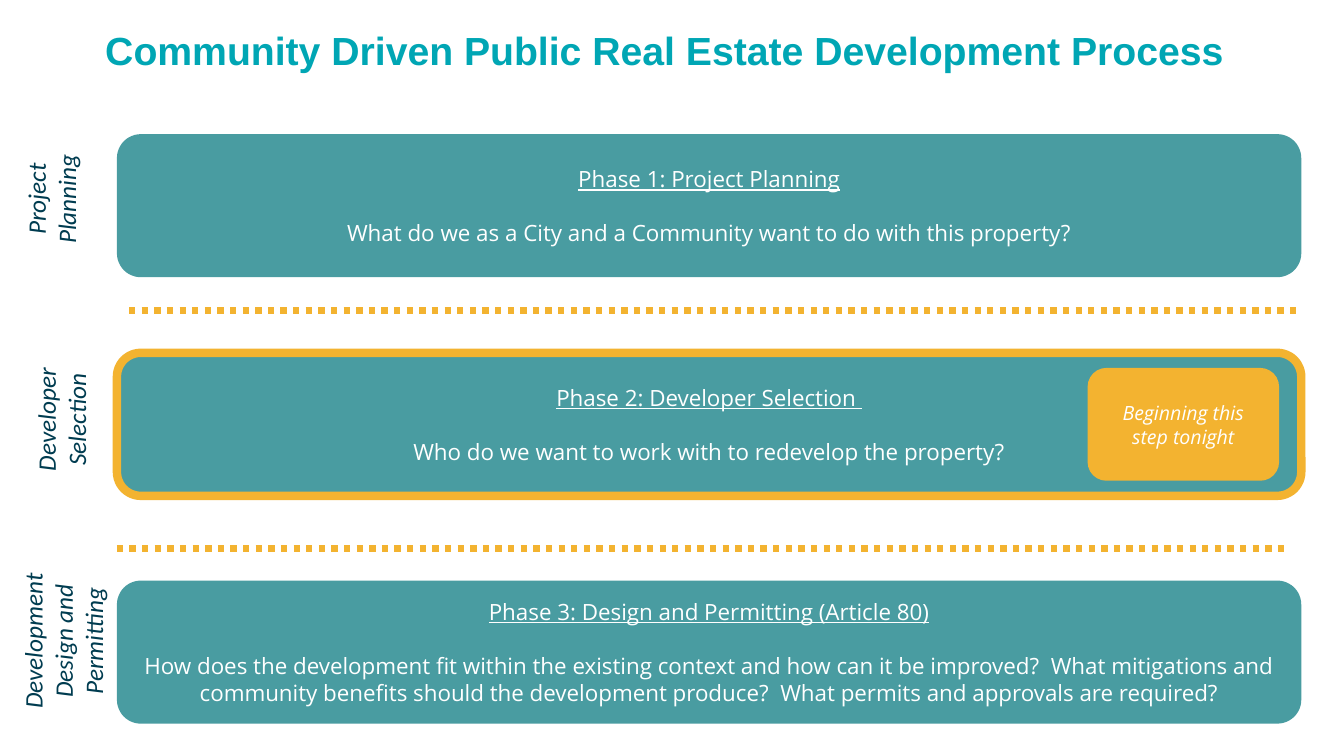
from dataclasses import dataclass

from pptx import Presentation
from pptx.dml.color import RGBColor
from pptx.enum.dml import MSO_LINE
from pptx.enum.shapes import MSO_CONNECTOR, MSO_SHAPE
from pptx.enum.text import MSO_ANCHOR as Anchor, MSO_AUTO_SIZE as AutoSize, PP_ALIGN as Align
from pptx.oxml.ns import qn
from pptx.util import Pt


@dataclass(frozen=True)
class Theme:
    title: RGBColor = RGBColor.from_string("00A6B4")
    phase: RGBColor = RGBColor.from_string("499CA1")
    accent: RGBColor = RGBColor.from_string("F3B330")
    label: RGBColor = RGBColor.from_string("003C50")
    white: RGBColor = RGBColor.from_string("FFFFFF")
    title_size: int = 28
    label_size: int = 18
    phase_size: int = 16
    badge_size: int = 14
    leading: float = 1.21


theme = Theme()


def write(frame, lines, font, size, color, anchor=Anchor.MIDDLE, **styles):
    """Fill a text frame with centred paragraphs in one style."""
    frame.text = "\n".join(lines)
    frame.word_wrap = True
    frame.auto_size = AutoSize.NONE
    frame.vertical_anchor = anchor
    for para in frame.paragraphs:
        para.alignment = Align.CENTER
        for span in para.runs:
            span.font.name = font
            span.font.size = Pt(size)
            span.font.color.rgb = color
            for style, value in styles.items():
                setattr(span.font, style, value)


def add_box(left, top, width, height, fill, lines, size, **styles):
    """Add a rounded box with white text and fixed line spacing."""
    box = slide.shapes.add_shape(
        MSO_SHAPE.ROUNDED_RECTANGLE, Pt(left), Pt(top), Pt(width), Pt(height))
    box.adjustments[0] = 0.167
    box.shadow.inherit = False
    box.fill.solid()
    box.fill.fore_color.rgb = fill
    box.line.fill.background()
    write(box.text_frame, lines, "Open Sans", size, theme.white, **styles)
    for para in box.text_frame.paragraphs:
        para.line_spacing = Pt(size * theme.leading)
    return box


deck = Presentation()
deck.slide_width, deck.slide_height = Pt(960), Pt(540)
page = slide = deck.slides.add_slide(deck.slide_layouts[5])

# Title
title = page.shapes.title
title.left, title.top, title.width, title.height = Pt(28), Pt(15), Pt(893), Pt(91.5)
write(title.text_frame, ["Community Driven Public Real Estate Development Process"],
      "Arial", theme.title_size, theme.title, Anchor.TOP, bold=True)

# Dotted dividers between the phases
for left, top in [(92.2, 221.8), (83.5, 391.7)]:
    divider = page.shapes.add_connector(
        MSO_CONNECTOR.STRAIGHT, Pt(left), Pt(top), Pt(left + 837.4), Pt(top))
    divider.line.color.rgb = theme.accent
    divider.line.width = Pt(4.5)
    divider.line.dash_style = MSO_LINE.ROUND_DOT
    properties = divider.element.spPr
    properties.append(properties.makeelement(qn("a:effectLst"), {}))

# Phase boxes
phases = [
    (95.8, "Phase 1: Project Planning",
     "What do we as a City and a Community want to do with this property?"),
    (252, "Phase 2: Developer Selection ",
     "Who do we want to work with to redevelop the property?"),
    (414.7, "Phase 3: Design and Permitting (Article 80)",
     "How does the development fit within the existing context and how can it be "
     "improved?  What mitigations and community benefits should the development "
     "produce?  What permits and approvals are required?"),
]
boxes = []
for top, heading, question in phases:
    box = add_box(83.5, top, 846, 102.2, theme.phase, [heading, question], theme.phase_size)
    first, second = box.text_frame.paragraphs
    first.runs[0].font.underline = True
    second.space_before = Pt(theme.phase_size * theme.leading)
    boxes.append(box)

# Current phase: outline and badge
current = boxes[1]
current.line.color.rgb = theme.accent
current.line.width = Pt(6)
add_box(776.9, 262.8, 136.8, 80.6, theme.accent, ["Beginning this step tonight"],
        theme.badge_size, italic=True)

# Rotated side labels: left, top, width, height, bottom inset, lines
labels = [
    (-3.6, 121, 80, 42.5, 0, ["Project Planning"]),
    (-3.6, 278.6, 94.3, 42.5, 0, ["Developer", "Selection"]),
    (-10.8, 430.6, 133.2, 54.7, 22, ["Development Design and Permitting"]),
]
for left, top, width, height, bottom, lines in labels:
    label = page.shapes.add_textbox(Pt(left), Pt(top), Pt(width), Pt(height))
    label.rotation = 270
    frame = label.text_frame
    frame.margin_left = frame.margin_right = frame.margin_top = 0
    frame.margin_bottom = Pt(bottom)
    write(frame, lines, "Calibri", theme.label_size, theme.label, italic=True)

deck.save("out.pptx")
